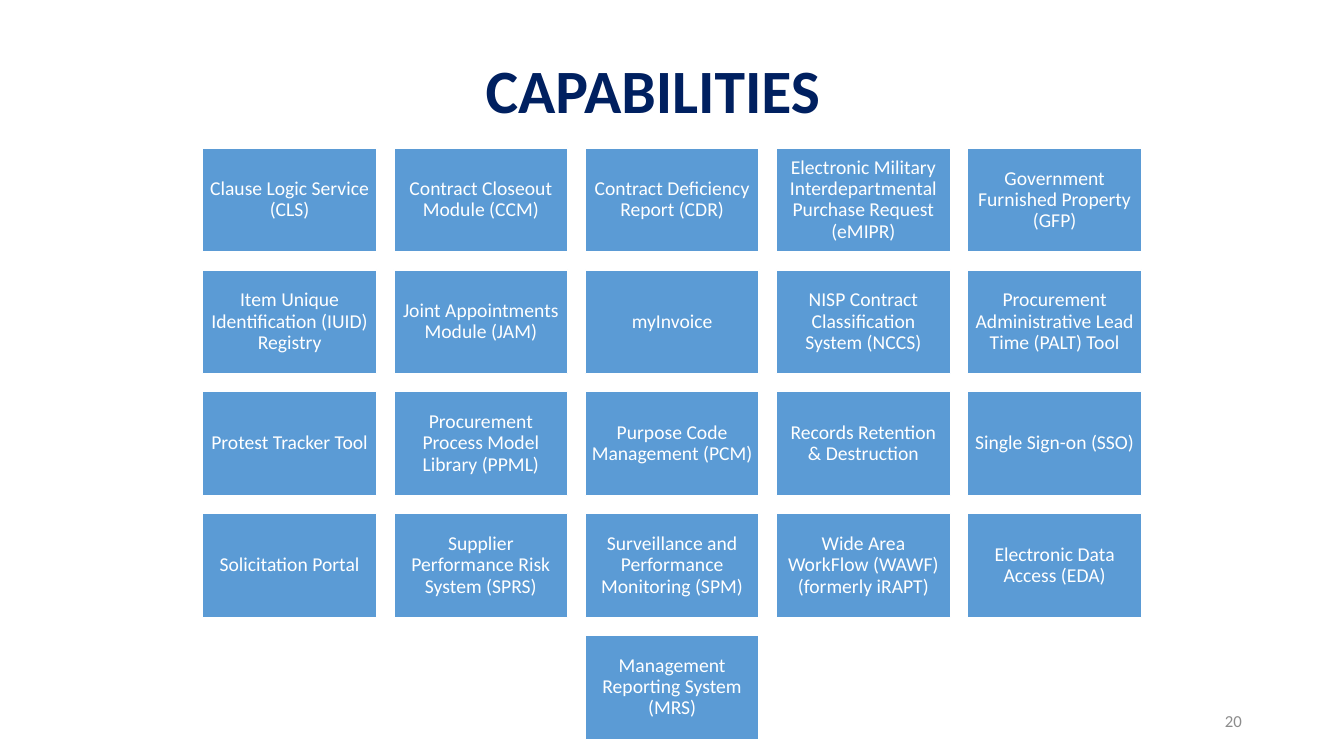
from dataclasses import dataclass

import pptx
import pptx.dml.color
import pptx.enum.shapes
import pptx.enum.text
import pptx.util

Cm = pptx.util.Cm
Pt = pptx.util.Pt
RGBColor = pptx.dml.color.RGBColor
Align = pptx.enum.text.PP_ALIGN

NAVY = RGBColor(0x00, 0x20, 0x60)
BLUE = RGBColor(0x5B, 0x9B, 0xD5)
WHITE = RGBColor(0xFF, 0xFF, 0xFF)
GRAY = RGBColor(0x8C, 0x8C, 0x8C)

GRID_LEFT, GRID_TOP = 5.11, 3.73
TILE_WIDTH, TILE_HEIGHT = 4.38, 2.62
COLUMN_STEP, ROW_STEP = 4.82, 3.07
COLUMNS = 5

CAPABILITIES = [
    "Clause Logic Service (CLS)",
    "Contract Closeout Module (CCM)",
    "Contract Deficiency Report (CDR)",
    "Electronic Military Interdepartmental Purchase Request (eMIPR)",
    "Government Furnished Property (GFP)",
    "Item Unique Identification (IUID) Registry",
    "Joint Appointments Module (JAM)",
    "myInvoice",
    "NISP Contract Classification System (NCCS)",
    "Procurement Administrative Lead Time (PALT) Tool",
    "Protest Tracker Tool",
    "Procurement Process Model Library (PPML)",
    "Purpose Code Management (PCM)",
    "Records Retention & Destruction",
    "Single Sign-on (SSO)",
    "Solicitation Portal",
    "Supplier Performance Risk System (SPRS)",
    "Surveillance and Performance Monitoring (SPM)",
    "Wide Area WorkFlow (WAWF) (formerly iRAPT)",
    "Electronic Data Access (EDA)",
    "Management Reporting System (MRS)",
]


@dataclass(frozen=True)
class Tile:
    label: str
    left: float
    top: float


def apply_format(target: object, values: dict) -> None:
    for name, value in values.items():
        setattr(target, name, value)


def write_text(box, text: str, size: float, color: RGBColor, bold: bool = False,
               alignment=Align.CENTER, line_spacing: float = 0.9) -> None:
    frame = box.text_frame
    apply_format(frame, {
        "word_wrap": True,
        "vertical_anchor": pptx.enum.text.MSO_ANCHOR.MIDDLE,
    })
    para = frame.paragraphs[0]
    apply_format(para, {"alignment": alignment, "line_spacing": line_spacing})
    span = para.add_run()
    span.text = text
    apply_format(span.font, {"name": "Calibri", "size": Pt(size), "bold": bold})
    span.font.color.rgb = color


def lay_out_tiles() -> list[Tile]:
    tiles = []
    for start in range(0, len(CAPABILITIES), COLUMNS):
        row = CAPABILITIES[start:start + COLUMNS]
        left = GRID_LEFT + (COLUMNS - len(row)) / 2 * COLUMN_STEP
        top = GRID_TOP + start // COLUMNS * ROW_STEP
        tiles += [Tile(label, left + column * COLUMN_STEP, top)
                  for column, label in enumerate(row)]
    return tiles


def draw_tile(page, tile: Tile) -> None:
    box = page.shapes.add_shape(
        pptx.enum.shapes.MSO_SHAPE.RECTANGLE,
        Cm(tile.left), Cm(tile.top), Cm(TILE_WIDTH), Cm(TILE_HEIGHT))
    box.shadow.inherit = False
    box.fill.solid()
    box.fill.fore_color.rgb = BLUE
    box.line.color.rgb = WHITE
    box.line.width = Pt(1)
    sides = ("left", "top", "right", "bottom")
    apply_format(box.text_frame, {f"margin_{side}": Cm(0.15) for side in sides})
    write_text(box, tile.label, 14, WHITE)


def main() -> None:
    deck = pptx.Presentation()
    apply_format(deck, {"slide_width": Cm(33.87), "slide_height": Cm(19.05)})
    page = deck.slides.add_slide(deck.slide_layouts.get_by_name("Title Only"))

    title = page.shapes.title
    apply_format(title, {"left": Cm(2.54), "top": Cm(1.02),
                         "width": Cm(27.84), "height": Cm(2.67)})
    write_text(title, "CAPABILITIES", 44, NAVY, bold=True)

    page_number = page.shapes.add_textbox(Cm(23.93), Cm(17.65), Cm(7.62), Cm(1.02))
    write_text(page_number, "20", 12, GRAY, alignment=Align.RIGHT, line_spacing=1.0)

    for tile in lay_out_tiles():
        draw_tile(page, tile)

    deck.save("out.pptx")


if __name__ == "__main__":
    main()
